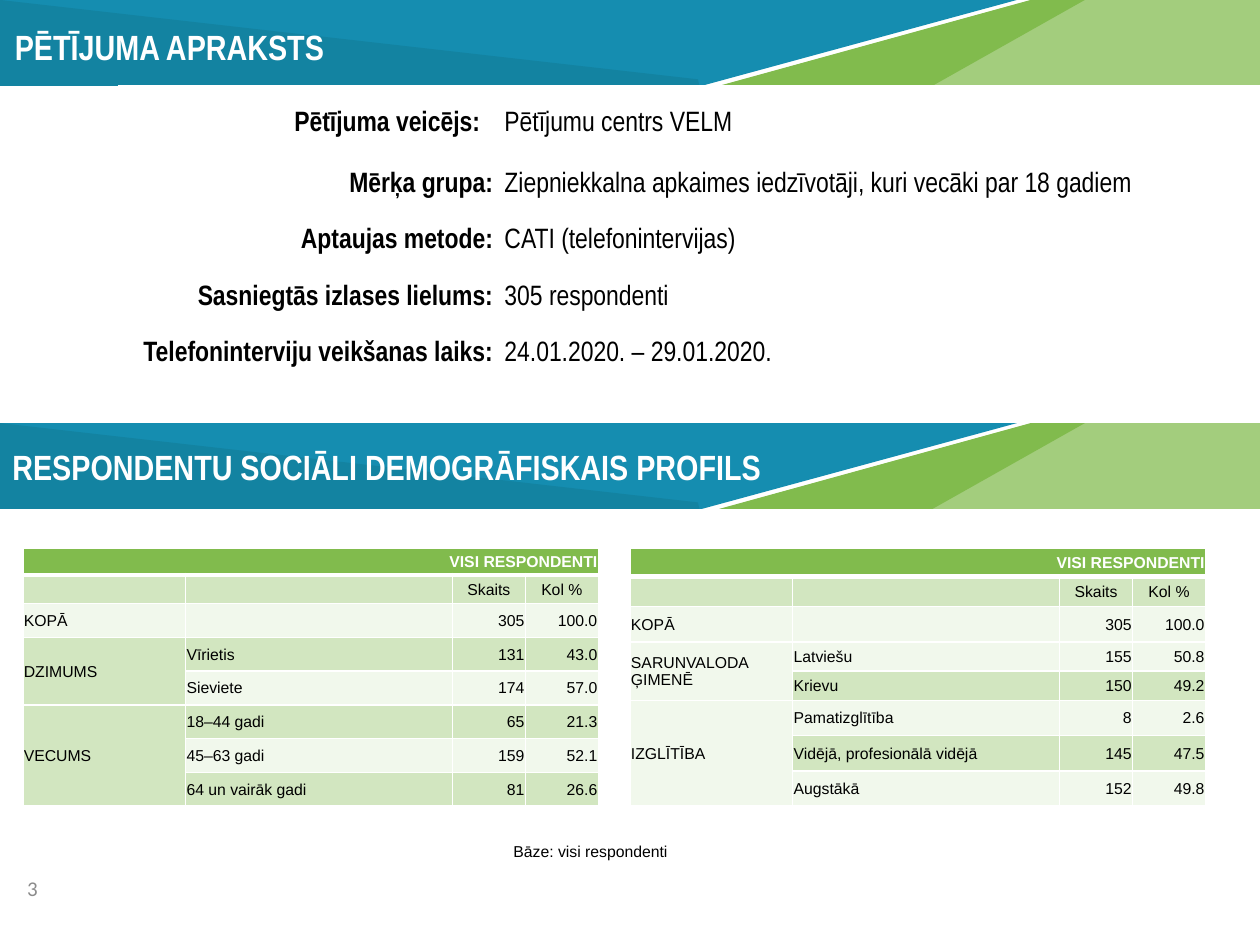
from lxml import etree
from pptx import Presentation
from pptx import util as u
from pptx.dml.color import RGBColor
from pptx.enum import text
from pptx.oxml import ns

WHITE = RGBColor(0xFF, 0xFF, 0xFF)
BLACK = RGBColor(0, 0, 0)
GREY = RGBColor(0x8C, 0x8C, 0x8C)
BLUE = RGBColor(0x15, 0x8D, 0xB0)
DARK_BLUE = RGBColor(0x13, 0x83, 0xA1)
GREEN = RGBColor(0x81, 0xBB, 0x4D)
LIGHT_GREEN = RGBColor(0xA3, 0xCD, 0x7D)
ROW_DARK = RGBColor(0xD2, 0xE6, 0xC0)
ROW_LIGHT = RGBColor(0xF1, 0xF8, 0xEC)
LEFT, CENTER, RIGHT = text.PP_ALIGN.LEFT, text.PP_ALIGN.CENTER, text.PP_ALIGN.RIGHT
MIDDLE, TOP = text.MSO_ANCHOR.MIDDLE, text.MSO_ANCHOR.TOP


def add_run(paragraph, words, font, size, color, bold=False):
    run = paragraph.add_run()
    run.text = words
    run.font.name = font
    run.font.size = u.Pt(size)
    run.font.bold = bold
    run.font.color.rgb = color


def add_white_border(cell, side, points):
    properties = cell._tc.get_or_add_tcPr()
    line = etree.SubElement(properties, ns.qn(f"a:ln{side}"), w=str(u.Pt(points)))
    fill = etree.SubElement(line, ns.qn("a:solidFill"))
    etree.SubElement(fill, ns.qn("a:srgbClr"), val=str(WHITE))


presentation = Presentation()
presentation.slide_width = u.Cm(25.4)
presentation.slide_height = u.Cm(19.05)
slide = presentation.slides.add_slide(presentation.slide_layouts[6])

# Two heading bands, each of four overlapping outlines
BAND_HEIGHT = 1.73
band_outlines = [
    (BLUE, [(0, 0), (20.5, 0), (14.15, BAND_HEIGHT), (0, 1.65)]),
    (DARK_BLUE, [(0, 0), (14.07, 1.6), (14.1, BAND_HEIGHT), (0, BAND_HEIGHT)]),
    (LIGHT_GREEN, [(14.53, BAND_HEIGHT), (20.8, 0), (25.42, 0), (25.42, BAND_HEIGHT)]),
    (GREEN, [(14.5, BAND_HEIGHT), (20.78, 0), (21.87, 0), (18.8, BAND_HEIGHT)]),
]
for band_top in (0, 8.53):
    for color, points in band_outlines:
        corners = [(u.Cm(x), u.Cm(band_top + y)) for x, y in points]
        builder = slide.shapes.build_freeform(*corners[0])
        builder.add_line_segments(corners[1:], close=True)
        shape = builder.convert_to_shape()
        shape.shadow.inherit = False
        shape.fill.solid()
        shape.fill.fore_color.rgb = color
        shape.line.fill.background()

# Headings, base note and page number
text_boxes = [
    (0.05, 0.13, 25.35, 1.6, MIDDLE, "PĒTĪJUMA APRAKSTS", "Arial Narrow", 20, WHITE, True),
    (0, 8.86, 24.9, 1.32, TOP, "RESPONDENTU SOCIĀLI DEMOGRĀFISKAIS PROFILS",
     "Arial Narrow", 20, WHITE, True),
    (10.1, 16.84, 9.78, 0.64, TOP, "Bāze: visi respondenti", "Arial", 9, BLACK, False),
    (0.3, 17.53, 2.69, 1.02, TOP, "3", "Calibri", 12, GREY, False),
]
for left, top, width, height, anchor, words, font, size, color, bold in text_boxes:
    box = slide.shapes.add_textbox(u.Cm(left), u.Cm(top), u.Cm(width), u.Cm(height))
    box.text_frame.word_wrap = True
    box.text_frame.vertical_anchor = anchor
    add_run(box.text_frame.paragraphs[0], words, font, size, color, bold)

# Study description: bold labels on the left, facts on the right
facts = [
    ("Pētījuma veicējs:", "Pētījumu centrs VELM"),
    ("Mērķa grupa:", "Ziepniekkalna apkaimes iedzīvotāji, kuri vecāki par 18 gadiem"),
    ("Aptaujas metode:", "CATI (telefonintervijas)"),
    ("Sasniegtās izlases lielums:", "305 respondenti"),
    ("Telefoninterviju veikšanas laiks:", "24.01.2020. – 29.01.2020."),
]
fact_table = slide.shapes.add_table(
    len(facts), 2, u.Cm(2.39), u.Cm(1.73), u.Cm(23), u.Cm(5.86)).table
fact_table.first_row = fact_table.horz_banding = False
fact_table.columns[0].width = u.Cm(7.6)
fact_table.columns[1].width = u.Cm(15.4)
for row, pair in enumerate(facts):
    fact_table.rows[row].height = u.Cm(1.14 if row else 1.3)
    for column, words in enumerate(pair):
        cell = fact_table.cell(row, column)
        cell.fill.background()
        cell.vertical_anchor = MIDDLE
        cell.margin_top = cell.margin_bottom = cell.margin_right = u.Cm(0.05)
        cell.margin_left = u.Cm(0.18 if column else 0.05)
        paragraph = cell.text_frame.paragraphs[0]
        paragraph.alignment = LEFT if column else RIGHT
        paragraph.line_spacing = 1.5
        paragraph.space_before = paragraph.space_after = u.Pt(2.4)
        add_run(paragraph, words, "Arial Narrow", 16, BLACK, column == 0)
fact_table.cell(0, 0).margin_right = u.Cm(0.31)

# Respondent profile: left edge, row heights, dark rows, merged groups, contents
HEAD = [("VISI RESPONDENTI", "", "", ""), ("", "", "Skaits", "Kol %"),
        ("KOPĀ", "", "305", "100.0")]
profiles = [
    (0.46, [0.54, 0.58] + [0.68] * 6, {1, 3, 5, 7}, HEAD + [
        ("DZIMUMS", "Vīrietis", "131", "43.0"),
        ("", "Sieviete", "174", "57.0"),
        ("VECUMS", "18–44 gadi", "65", "21.3"),
        ("", "45–63 gadi", "159", "52.1"),
        ("", "64 un vairāk gadi", "81", "26.6"),
    ]),
    (12.7, [0.57, 0.61, 0.71, 0.59, 0.59, 0.71, 0.71, 0.71], {1, 4, 6}, HEAD + [
        ("SARUNVALODA ĢIMENĒ", "Latviešu", "155", "50.8"),
        ("", "Krievu", "150", "49.2"),
        ("IZGLĪTĪBA", "Pamatizglītība", "8", "2.6"),
        ("", "Vidējā, profesionālā vidējā", "145", "47.5"),
        ("", "Augstākā", "152", "49.8"),
    ]),
]
for left, heights, dark_rows, contents in profiles:
    table = slide.shapes.add_table(
        8, 4, u.Cm(left), u.Cm(11.05), u.Cm(11.6), u.Cm(sum(heights))).table
    table.horz_banding = False
    for column, width in enumerate((3.28, 5.38, 1.47, 1.47)):
        table.columns[column].width = u.Cm(width)
    for row, values in enumerate(contents):
        table.rows[row].height = u.Cm(heights[row])
        for column, words in enumerate(values):
            cell = table.cell(row, column)
            for side in "LRTB":
                under_header = (row, side) in ((0, "B"), (1, "T"))
                add_white_border(cell, side, 3 if under_header else 1)
            cell.fill.solid()
            cell.fill.fore_color.rgb = (
                GREEN if row == 0 else ROW_DARK if row in dark_rows else ROW_LIGHT)
            cell.vertical_anchor = MIDDLE
            cell.margin_left = cell.margin_right = cell.margin_top = u.Cm(0.02)
            cell.margin_bottom = 0
            paragraph = cell.text_frame.paragraphs[0]
            if row == 1:
                paragraph.alignment = CENTER
            else:
                paragraph.alignment = RIGHT if row == 0 or column > 1 else LEFT
            if words:
                add_run(paragraph, words, "Arial", 9, BLACK if row else WHITE, row == 0)
            else:
                # Keep empty cells from stretching their row
                etree.SubElement(paragraph._p, ns.qn("a:endParaRPr"), sz="900")
    table.cell(0, 0).merge(table.cell(0, 3))
    table.cell(3, 0).merge(table.cell(4, 0))
    table.cell(5, 0).merge(table.cell(7, 0))

presentation.save("out.pptx")
